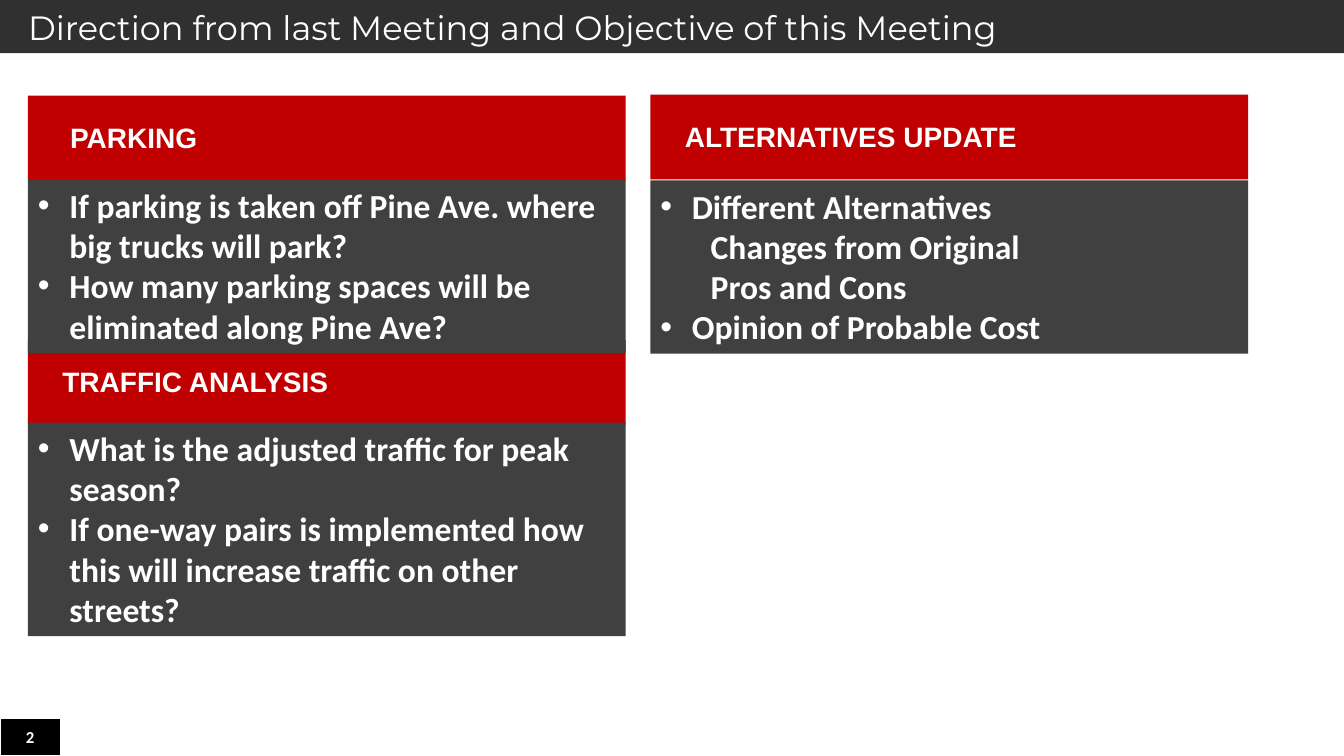
from pptx import Presentation
from pptx.dml.color import RGBColor
from pptx.enum import shapes, text
from pptx.oxml import parse_xml
from pptx.oxml.ns import nsdecls
from pptx.util import Pt

SLIDE_WIDTH, SLIDE_HEIGHT = 960, 540
PANEL_WIDTH, BANNER_HEIGHT = 427, 60.5
WHITE, RED, GREY, CHARCOAL, BLACK = "FFFFFF", "C00000", "404040", "303030", "000000"


def color(hex_value):
    return RGBColor.from_string(hex_value)


def style_runs(frame, font_name, size, bold=True):
    for paragraph in frame.paragraphs:
        for run in paragraph.runs:
            run.font.name = font_name
            run.font.size = Pt(size)
            run.font.bold = bold
            run.font.color.rgb = color(WHITE)


def add_block(slide, left, top, width, height, fill):
    """Add a flat rectangle without outline or shadow."""
    block = slide.shapes.add_shape(
        shapes.MSO_SHAPE.RECTANGLE, Pt(left), Pt(top), Pt(width), Pt(height))
    block.shadow.inherit = False
    block.fill.solid()
    block.fill.fore_color.rgb = color(fill)
    block.line.fill.background()
    return block


def indent_paragraph(paragraph, margin, hanging=0, bullet=None):
    properties = paragraph._p.get_or_add_pPr()
    properties.set("marL", str(Pt(margin)))
    properties.set("indent", str(Pt(-hanging)))
    if bullet:
        properties.append(parse_xml(f'<a:buFont {nsdecls("a")} typeface="Arial"/>'))
        properties.append(parse_xml(f'<a:buChar {nsdecls("a")} char="{bullet}"/>'))


def add_title_bar(slide, wording, height):
    title = slide.shapes.title
    title.left, title.top = Pt(0), Pt(0)
    title.width, title.height = Pt(SLIDE_WIDTH), Pt(height)
    title.fill.solid()
    title.fill.fore_color.rgb = color(CHARCOAL)
    frame = title.text_frame
    frame.text = wording
    frame.auto_size = text.MSO_AUTO_SIZE.NONE
    frame.vertical_anchor = text.MSO_ANCHOR.MIDDLE
    frame.margin_left = Pt(20)
    frame.paragraphs[0].alignment = text.PP_ALIGN.LEFT
    style_runs(frame, "Montserrat", 24, bold=False)


def add_topic(slide, left, top, heading, heading_inset, body_offset, body_height, points):
    """Add a red banner over a grey list; points are (level, wording) pairs."""
    add_block(slide, left, top, PANEL_WIDTH, BANNER_HEIGHT, RED)

    label = slide.shapes.add_textbox(
        Pt(left + heading_inset), Pt(top + 14.2), Pt(360), Pt(31.5))
    label.text_frame.text = heading
    label.text_frame.word_wrap = True
    label.text_frame.auto_size = text.MSO_AUTO_SIZE.SHAPE_TO_FIT_TEXT
    style_runs(label.text_frame, "Arial", 20)

    body = add_block(slide, left, top + body_offset, PANEL_WIDTH, body_height, GREY)
    frame = body.text_frame
    frame.word_wrap = True
    frame.auto_size = text.MSO_AUTO_SIZE.SHAPE_TO_FIT_TEXT
    frame.vertical_anchor = text.MSO_ANCHOR.TOP
    frame.text = "\n".join(wording for _, wording in points)
    for paragraph, (level, _) in zip(frame.paragraphs, points):
        paragraph.alignment = text.PP_ALIGN.LEFT
        paragraph.level = level
        if level:
            indent_paragraph(paragraph, 36)
        else:
            indent_paragraph(paragraph, 22.5, hanging=22.5, bullet="•")
    style_runs(frame, "Calibri", 24)


def add_page_number(slide, number, width, height):
    tab = add_block(slide, 0, SLIDE_HEIGHT - height, width, height, BLACK)
    tab.line.color.rgb = color(WHITE)
    tab.line.width = Pt(0.75)
    tab.text_frame.text = number
    tab.text_frame.vertical_anchor = text.MSO_ANCHOR.MIDDLE
    tab.text_frame.paragraphs[0].alignment = text.PP_ALIGN.CENTER
    style_runs(tab.text_frame, "Calibri", 12)


def main():
    presentation = Presentation()
    presentation.slide_width, presentation.slide_height = Pt(SLIDE_WIDTH), Pt(SLIDE_HEIGHT)
    slide = presentation.slides.add_slide(presentation.slide_layouts[5])

    add_title_bar(slide, "Direction from last Meeting and Objective of this Meeting", 38)
    # The parking list overlaps the traffic banner, so traffic goes first.
    add_topic(slide, 20, 242.8, "TRAFFIC ANALYSIS", 17.5, 59, 152.6, [
        (0, "What is the adjusted traffic for peak season?"),
        (0, "If one-way pairs is implemented how this will increase traffic "
            "on other streets?"),
    ])
    add_topic(slide, 20, 68.4, "PARKING", 23, 59.8, 123.8, [
        (0, "If parking is taken off Pine Ave. where big trucks will park?"),
        (0, "How many parking spaces will be eliminated along Pine Ave?"),
    ])
    add_topic(slide, 464.6, 67.6, "ALTERNATIVES UPDATE", 17.5, 61.3, 123.8, [
        (0, "Different Alternatives"),
        (1, "Changes from Original"),
        (1, "Pros and Cons"),
        (0, "Opinion of Probable Cost"),
    ])
    add_page_number(slide, "2", 43, 27)

    presentation.save("out.pptx")


if __name__ == "__main__":
    main()
